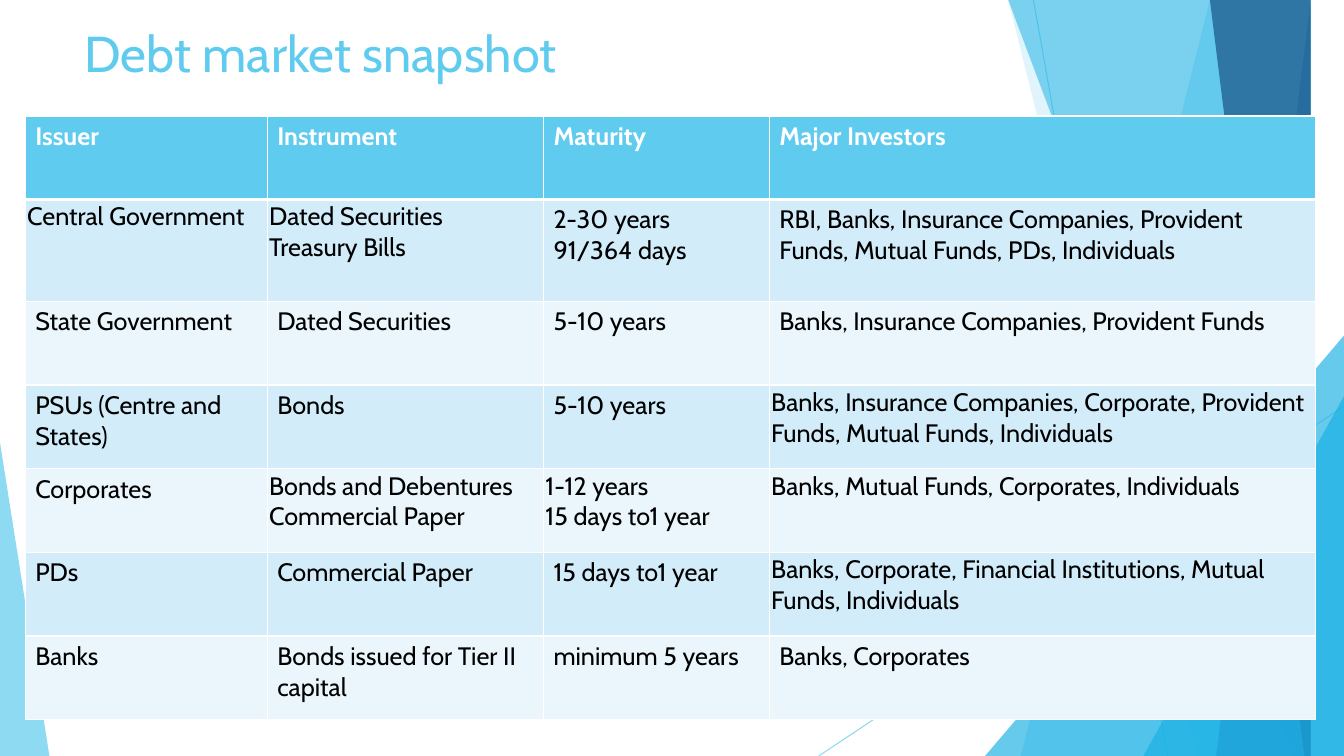
from dataclasses import dataclass
from lxml.etree import SubElement
from pptx import Presentation
from pptx.dml.color import RGBColor
from pptx.enum.shapes import MSO_CONNECTOR, MSO_SHAPE
from pptx.enum.text import MSO_ANCHOR, PP_ALIGN
from pptx.oxml import parse_xml
from pptx.oxml.ns import nsdecls, qn
from pptx.util import Inches, Pt


@dataclass(frozen=True)
class Theme:
    font: str = "Cabin"
    sky: str = "5FCBEF"
    cyan: str = "17B0E4"
    blue: str = "2E83C3"
    navy: str = "226292"
    white: str = "FFFFFF"
    black: str = "000000"
    odd: str = "D2ECF9"
    even: str = "EAF6FC"
    head: int = 36
    body: int = 18
    hair: float = 0.75
    grid: int = 1
    rule: int = 3


THEME = Theme()
WIDE, HIGH = 13.33, 7.5

LINES = [(10.25, 0, 11.58, HIGH), (WIDE, 4.03, 8.12, HIGH)]
BACK = [(12.28, 10.04, THEME.sky, 36), (10.5, 11.83, THEME.sky, 20)]
FRONT = [
    (10.21, 12.91, THEME.cyan, 50),
    (13.03, 11.92, THEME.blue, 70),
    (11.96, 13.18, THEME.navy, 80),
]

COLS = [2.4, 2.74, 2.24, 5.42]
ROWS = [0.83, 1.01] + [0.83] * 5
TIGHT = {(1, 0), (1, 1), (3, 3), (4, 1), (4, 2), (4, 3), (5, 3)}
DATA = [
    ["Issuer", "Instrument", "Maturity", "Major Investors"],
    ["Central Government", "Dated Securities\nTreasury Bills",
     "2-30 years\n91/364 days",
     "RBI, Banks, Insurance Companies, Provident Funds, Mutual Funds, PDs, Individuals"],
    ["State Government", "Dated Securities", "5-10 years",
     "Banks, Insurance Companies, Provident Funds"],
    ["PSUs (Centre and States)", "Bonds", "5-10 years",
     "Banks, Insurance Companies, Corporate, Provident Funds, Mutual Funds, Individuals"],
    ["Corporates", "Bonds and Debentures\nCommercial Paper",
     "1-12 years\n15 days to1 year",
     "Banks, Mutual Funds, Corporates, Individuals"],
    ["PDs", "Commercial Paper", "15 days to1 year",
     "Banks, Corporate, Financial Institutions, Mutual Funds, Individuals"],
    ["Banks", "Bonds issued for Tier II capital", "minimum 5 years",
     "Banks, Corporates"],
]


def fade(fill, alpha):
    tint = fill.find(".//" + qn("a:srgbClr"))
    SubElement(tint, qn("a:alpha")).set("val", str(alpha * 1000))


def paint(shape, color, alpha):
    shape.shadow.inherit = False
    shape.fill.solid()
    shape.fill.fore_color.rgb = RGBColor.from_string(color)
    shape.line.fill.background()
    fade(shape._element.spPr.find(qn("a:solidFill")), alpha)


def add_line(slide, ends):
    line = slide.shapes.add_connector(
        MSO_CONNECTOR.STRAIGHT, *[Inches(end) for end in ends])
    line.line.color.rgb = RGBColor.from_string(THEME.sky)
    line.line.width = Pt(THEME.hair)
    props = line._element.spPr
    fade(props.find(qn("a:ln")), 70)
    SubElement(props, qn("a:effectLst"))


def add_band(slide, top, base, color, alpha):
    form = slide.shapes.build_freeform(top, 0, scale=Inches(1))
    form.add_line_segments([(WIDE, 0), (WIDE, HIGH), (base, HIGH)], close=True)
    paint(form.convert_to_shape(), color, alpha)


def add_wedge(slide, left, top, width, peak, color, alpha):
    wedge = slide.shapes.add_shape(
        MSO_SHAPE.ISOSCELES_TRIANGLE, Inches(left), Inches(top),
        Inches(width), Inches(HIGH - top))
    wedge.adjustments[0] = peak
    paint(wedge, color, alpha)


def write(para, text, size, color, bold=False):
    run = para.add_run()
    run.text = text
    run.font.name = THEME.font
    run.font.size = Pt(size)
    run.font.bold = bold
    run.font.color.rgb = RGBColor.from_string(color)


def add_title(slide, text):
    box = slide.shapes.add_textbox(
        Inches(0.74), Inches(0.17), Inches(9.4), Inches(0.8))
    frame = box.text_frame
    frame.word_wrap = True
    frame.vertical_anchor = MSO_ANCHOR.TOP
    write(frame.paragraphs[0], text, THEME.head, THEME.sky)


def edge(cell, top, base):
    props = cell._tc.get_or_add_tcPr()
    sides = [("L", THEME.grid), ("R", THEME.grid), ("T", top), ("B", base)]
    for place, (side, width) in enumerate(sides):
        props.insert(place, parse_xml(
            f'<a:ln{side} {nsdecls("a")} w="{Pt(width)}"><a:solidFill>'
            f'<a:srgbClr val="{THEME.white}"/></a:solidFill></a:ln{side}>'))


def fill_cell(cell, text, row, tight):
    head = row == 0
    shade = THEME.sky if head else THEME.odd if row % 2 else THEME.even
    cell.fill.solid()
    cell.fill.fore_color.rgb = RGBColor.from_string(shade)
    side, rise = (0.02, 0.02) if tight else (0.1, 0.05)
    cell.margin_left = cell.margin_right = Inches(side)
    cell.margin_top = cell.margin_bottom = Inches(rise)
    frame = cell.text_frame
    for count, line in enumerate(text.split("\n")):
        para = frame.add_paragraph() if count else frame.paragraphs[0]
        write(para, line, THEME.body, THEME.white if head else THEME.black, head)
    edge(cell, THEME.rule if row == 1 else THEME.grid,
         THEME.rule if head else THEME.grid)


def add_grid(slide):
    grid = slide.shapes.add_table(
        len(ROWS), len(COLS), Inches(0.25), Inches(1.15),
        Inches(sum(COLS)), Inches(sum(ROWS))).table
    for col, width in zip(grid.columns, COLS):
        col.width = Inches(width)
    for row, height in zip(grid.rows, ROWS):
        row.height = Inches(height)
    for row, texts in enumerate(DATA):
        for col, text in enumerate(texts):
            fill_cell(grid.cell(row, col), text, row, (row, col) in TIGHT)
    grid.cell(1, 0).text_frame.paragraphs[0].alignment = PP_ALIGN.JUSTIFY


def main():
    deck = Presentation()
    deck.slide_width, deck.slide_height = Inches(WIDE), Inches(HIGH)
    slide = deck.slides.add_slide(deck.slide_layouts[6])
    for ends in LINES:
        add_line(slide, ends)
    for band in BACK:
        add_band(slide, *band)
    add_wedge(slide, 9.77, 3.33, 3.56, 1, THEME.cyan, 66)
    for band in FRONT:
        add_band(slide, *band)
    add_wedge(slide, 11.34, 3.93, 1.99, 1, THEME.cyan, 66)
    add_wedge(slide, 0, 4.39, 0.49, 0, THEME.sky, 70)
    add_title(slide, "Debt market snapshot")
    add_grid(slide)
    deck.save("out.pptx")


if __name__ == "__main__":
    main()
